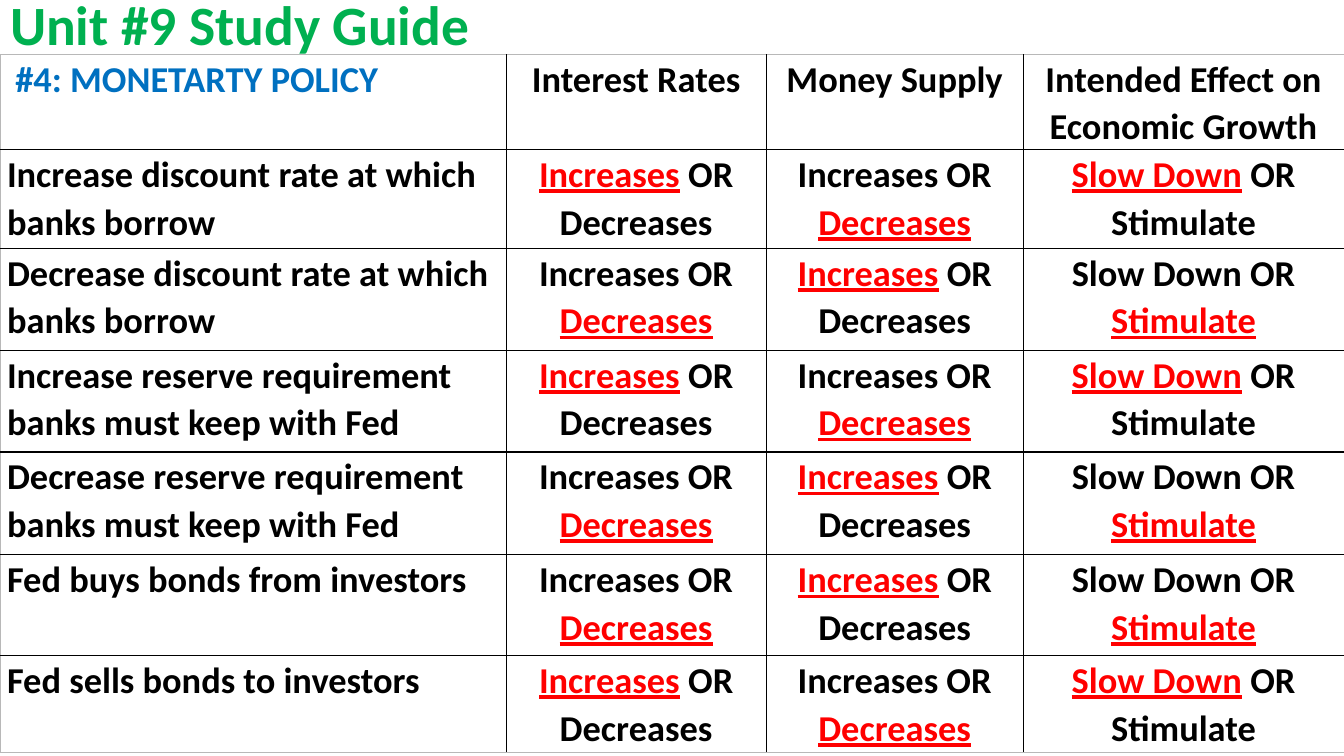
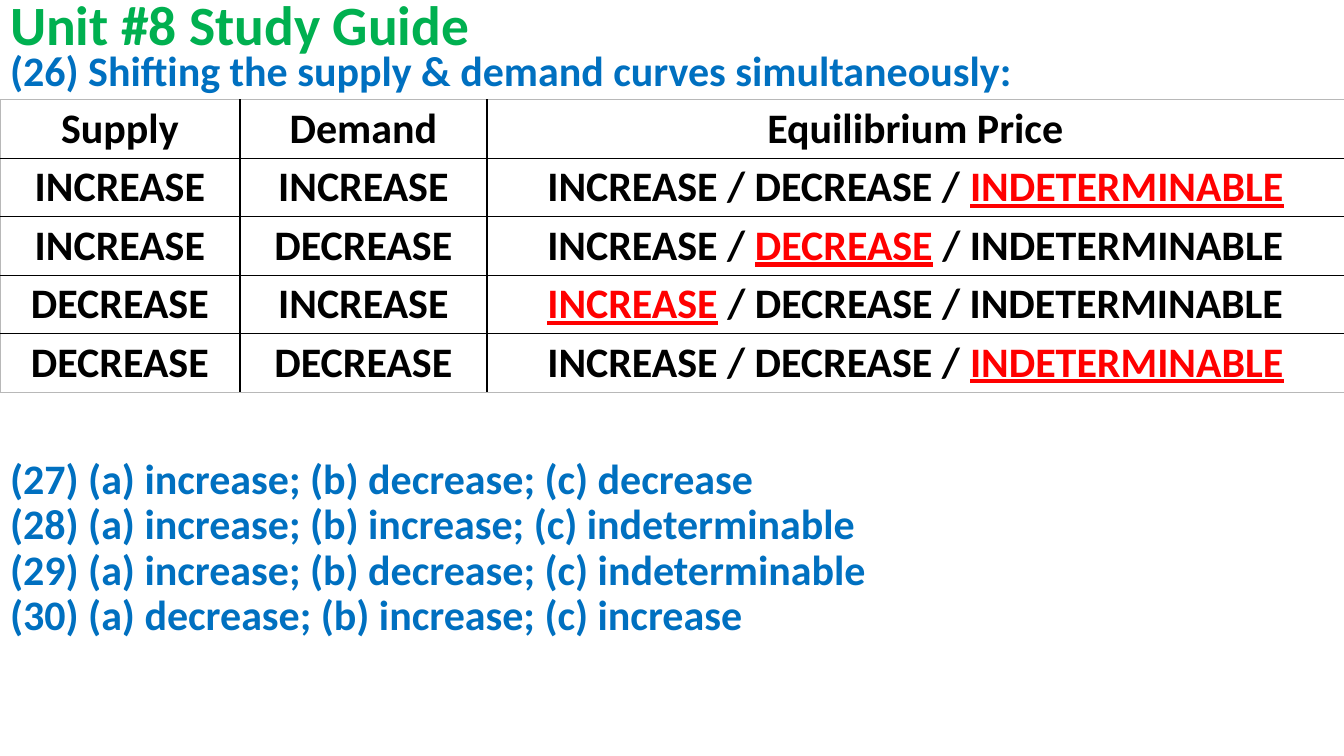
from lxml import etree
from pptx import Presentation
from pptx.dml.color import RGBColor
from pptx.enum.text import MSO_ANCHOR, MSO_AUTO_SIZE, PP_ALIGN
from pptx.oxml.ns import qn
from pptx.util import Inches, Pt

LEFT, CENTER = PP_ALIGN.LEFT, PP_ALIGN.CENTER
TOP, MIDDLE = MSO_ANCHOR.TOP, MSO_ANCHOR.MIDDLE
NO_AUTOFIT = MSO_AUTO_SIZE.NONE

GREEN = RGBColor(0x00, 0xB0, 0x50)
BLUE = RGBColor(0x00, 0x70, 0xC0)
RED = RGBColor(0xFF, 0x00, 0x00)
BLACK = RGBColor(0x00, 0x00, 0x00)
GRAY = RGBColor(0xB8, 0xB8, 0xB8)

FONT = "Calibri"
WIDTH, HEIGHT = 13.33, 7.5
TITLE_HEIGHT = 0.54
LAYOUT_LIST, LAYOUT_TITLE = 1, 5

RATE = SUPPLY = ("Increases", "Decreases")
GROWTH = ("Slow Down", "Stimulate")
TIGHT, LOOSE = (0, 1, 0), (1, 0, 1)
POLICY_HEADS = [" #4: MONETARTY POLICY", "Interest Rates", "Money Supply",
                "Intended Effect on Economic Growth"]
POLICIES = [
    ("Increase discount rate at which banks borrow", TIGHT),
    ("Decrease discount rate at which banks borrow", LOOSE),
    ("Increase reserve requirement banks must keep with Fed", TIGHT),
    ("Decrease reserve requirement banks must keep with Fed", LOOSE),
    ("Fed buys bonds from investors", LOOSE),
    ("Fed sells bonds to investors", TIGHT),
]

PRICE = ("INCREASE", "DECREASE", "INDETERMINABLE")
SHIFT_HEADS = ["Supply", "Demand", "Equilibrium Price"]
SHIFTS = [
    ("INCREASE", "INCREASE", 2),
    ("INCREASE", "DECREASE", 1),
    ("DECREASE", "INCREASE", 0),
    ("DECREASE", "DECREASE", 2),
]
SHIFT_PROMPT = "(26) Shifting the supply & demand curves simultaneously:"
SHIFT_ANSWERS = [
    "(27) (a) increase; (b) decrease; (c) decrease",
    "(28) (a) increase; (b) increase; (c) indeterminable",
    "(29) (a) increase; (b) decrease; (c) indeterminable",
    "(30) (a) decrease; (b) increase; (c) increase",
]


def place(shape, left, top, width, height):
    shape.left, shape.top = Inches(left), Inches(top)
    shape.width, shape.height = Inches(width), Inches(height)


def style(para, size, color, align=LEFT, spacing=0.9):
    para.alignment = align
    para.line_spacing = spacing
    para.space_before = para.space_after = Pt(0)
    font = para.font
    font.name, font.size, font.bold = FONT, Pt(size), True
    font.color.rgb = color


def add_page(deck, layout, title):
    page = deck.slides.add_slide(deck.slide_layouts[layout])
    box = page.shapes.title
    place(box, 0, 0, WIDTH, TITLE_HEIGHT)
    frame = box.text_frame
    frame.text = title
    frame.auto_size = NO_AUTOFIT
    frame.vertical_anchor = MIDDLE
    style(frame.paragraphs[0], 39.6, GREEN)
    return page


def fill_list(box, prompt, answers, size, gap):
    place(box, 0, 0.45, WIDTH, HEIGHT - 0.45)
    frame = box.text_frame
    frame.text = "\n".join([prompt, *answers])
    frame.auto_size = NO_AUTOFIT
    frame.vertical_anchor = TOP
    for para in frame.paragraphs:
        style(para, size, BLUE)
        properties = para._p.get_or_add_pPr()
        properties.set("marL", "0")
        properties.set("indent", "0")
        bullet = etree.Element(qn("a:buNone"))
        properties.find(qn("a:defRPr")).addprevious(bullet)
    frame.paragraphs[1].space_before = Pt(gap)


def choice(options, separator, answer):
    spans = []
    for index, option in enumerate(options):
        if index:
            spans.append((separator, False))
        spans.append((option, index == answer))
    return spans


def add_border(cell, side, color, points):
    properties = cell._tc.get_or_add_tcPr()
    line = etree.SubElement(properties, qn("a:ln" + side), w=str(Pt(points)))
    fill = etree.SubElement(line, qn("a:solidFill"))
    etree.SubElement(fill, qn("a:srgbClr"), val=str(color))


def fill_cell(cell, spans, size, color, align):
    cell.margin_left = cell.margin_right = Inches(0.07)
    cell.margin_top = cell.margin_bottom = 0
    para = cell.text_frame.paragraphs[0]
    style(para, size, color, align, 1.07)
    for text, marked in spans:
        span = para.add_run()
        span.text = text
        if marked:
            span.font.underline = True
            span.font.color.rgb = RED


def add_grid(page, top, columns, heights, rows, size, label_color, label_align):
    shape = page.shapes.add_table(len(rows), len(columns), 0, Inches(top),
                                  Inches(sum(columns)), Inches(sum(heights)))
    table = shape.table
    table.first_row = table.horz_banding = False
    for column, width in zip(table.columns, columns):
        column.width = Inches(width)
    last_row, last_column = len(rows) - 1, len(columns) - 1
    for r, (row, height) in enumerate(zip(rows, heights)):
        table.rows[r].height = Inches(height)
        for c, content in enumerate(row):
            cell = table.cell(r, c)
            outer = {"L": c == 0, "R": c == last_column,
                     "T": r == 0, "B": r == last_row}
            for side, edge in outer.items():
                add_border(cell, side, GRAY if edge else BLACK, 0.5 if edge else 1)
            cell.fill.background()
            spans = [(content, False)] if isinstance(content, str) else content
            color = label_color if r == c == 0 else BLACK
            fill_cell(cell, spans, size, color, CENTER if c else label_align)


def policy_page(deck):
    page = add_page(deck, LAYOUT_TITLE, "Unit #9 Study Guide")
    rows = [POLICY_HEADS]
    for policy, answers in POLICIES:
        effects = zip((RATE, SUPPLY, GROWTH), answers)
        rows.append([policy] + [choice(pair, " OR ", answer)
                                for pair, answer in effects])
    add_grid(page, TITLE_HEIGHT, [5.02, 2.58, 2.55, 3.18],
             [0.94, 0.98, 1.01, 1.01, 1.02, 1, 0.96], rows, 26, BLUE, LEFT)


def shift_page(deck):
    page = add_page(deck, LAYOUT_LIST, "Unit #8 Study Guide")
    fill_list(page.placeholders[1], SHIFT_PROMPT, SHIFT_ANSWERS, 30, 259)
    rows = [SHIFT_HEADS]
    for supply, demand, answer in SHIFTS:
        rows.append([supply, demand, choice(PRICE, " / ", answer)])
    add_grid(page, 0.99, [2.38, 2.45, 8.5], [0.58] * len(rows), rows,
             30, BLACK, CENTER)


def main():
    deck = Presentation()
    deck.slide_width, deck.slide_height = Inches(WIDTH), Inches(HEIGHT)
    policy_page(deck)
    shift_page(deck)
    deck.save("out.pptx")


if __name__ == "__main__":
    main()
